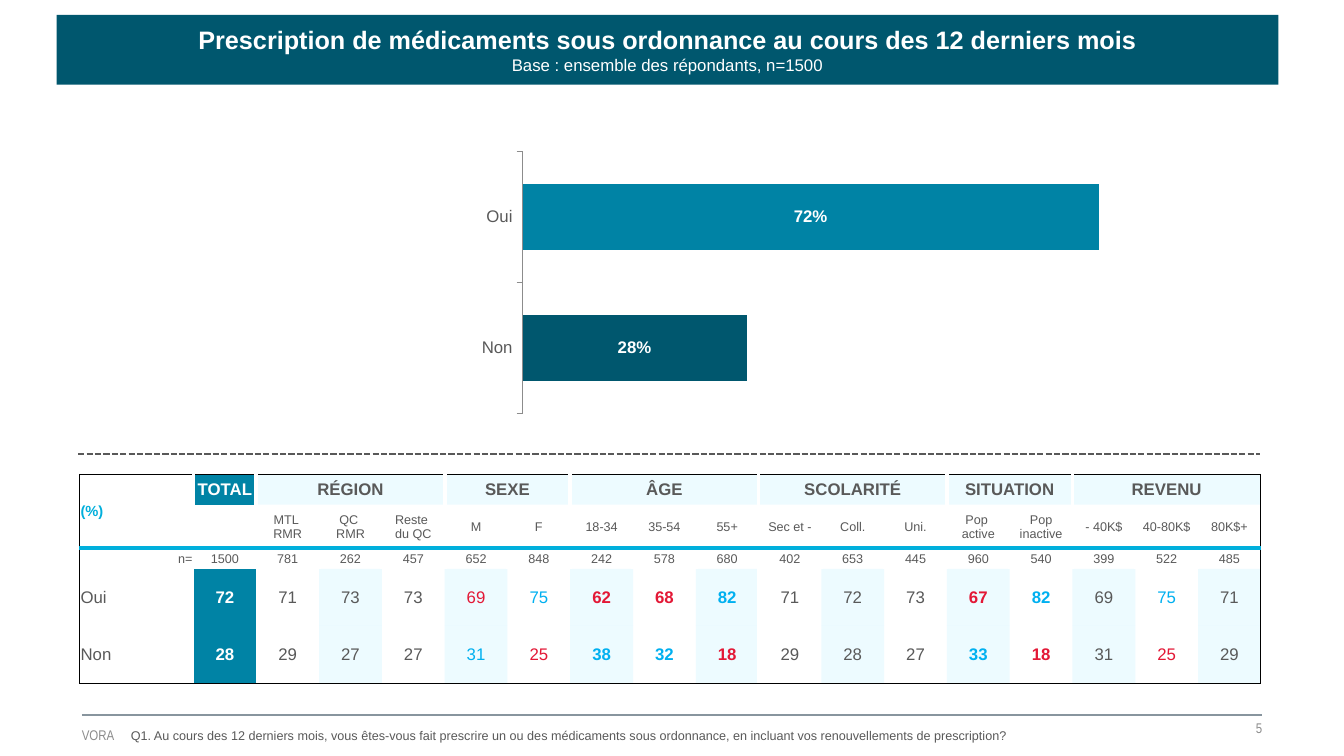
from lxml.etree import SubElement
from pptx import Presentation
from pptx.chart.data import CategoryChartData
from pptx.dml.color import RGBColor
from pptx.enum.chart import XL_CHART_TYPE, XL_LABEL_POSITION, XL_TICK_LABEL_POSITION, XL_TICK_MARK
from pptx.enum.dml import MSO_LINE
from pptx.enum.shapes import MSO_CONNECTOR, MSO_SHAPE
from pptx.enum.text import MSO_ANCHOR, PP_ALIGN
from pptx.oxml import parse_xml
from pptx.oxml.ns import nsdecls, qn
from pptx.util import Pt

COLORS = {
    "navy": "00576E", "teal": "0083A5", "cyan": "00AFDC", "band": "C5F3FF",
    "text": "595959", "muted": "8C8C8C", "rule": "88959E", "low": "E31836",
    "high": "00B0F0", "white": "FFFFFF", "black": "000000",
}
GROUPS = [("RÉGION", 3), ("SEXE", 2), ("ÂGE", 3), ("SCOLARITÉ", 3), ("SITUATION", 2), ("REVENU", 3)]
SEGMENTS = ["MTL \vRMR", "QC \vRMR", "Reste \vdu QC", "M", "F", "18-34", "35-54", "55+", "Sec et -",
            "Coll.", "Uni.", "Pop \vactive", "Pop inactive", "- 40K$", "40-80K$", "80K$+"]
COUNTS = "1500 781 262 457 652 848 242 578 680 402 653 445 960 540 399 522 485".split()
ANSWERS = {
    "Oui": "72 71 73 73 69r 75b 62R 68R 82B 71 72 73 67R 82B 69 75b 71".split(),
    "Non": "28 29 27 27 31b 25r 38B 32B 18R 29 28 27 33B 18R 31 25r 29".split(),
}
MARKS = {"r": "low", "b": "high"}
ROW_HEIGHTS = [21.4, 31, 15, 40.8, 40.8]
LAST_ROW, LAST_COLUMN = 4, 17
SCHOOLING_COLUMN = 10


def rgb(name):
    return RGBColor.from_string(COLORS[name])


def style_font(font, size, color, bold=False, name="Arial"):
    font.size, font.bold, font.name = Pt(size), bold, name
    font.color.rgb = rgb(color)


def add_text(slide, box, text, size, color, font="Arial", align=PP_ALIGN.LEFT, margins=None):
    frame = slide.shapes.add_textbox(*map(Pt, box)).text_frame
    frame.word_wrap = True
    if margins is not None:
        frame.margin_left = frame.margin_right = frame.margin_top = frame.margin_bottom = Pt(margins)
        frame.vertical_anchor = MSO_ANCHOR.MIDDLE
    frame.text = text
    paragraph = frame.paragraphs[0]
    paragraph.alignment = align
    style_font(paragraph.runs[0].font, size, color, name=font)


def add_rule(slide, left, right, top, color, dash=None):
    connector = slide.shapes.add_connector(MSO_CONNECTOR.STRAIGHT, Pt(left), Pt(top), Pt(right), Pt(top))
    connector.line.color.rgb = rgb(color)
    connector.line.width = Pt(1.5)
    if dash:
        connector.line.dash_style = dash
    SubElement(connector._element.spPr, qn("a:effectLst"))


def add_title(slide, heading, base):
    shape = slide.shapes.add_shape(MSO_SHAPE.RECTANGLE, Pt(40.5), Pt(10.6), Pt(872.6), Pt(49.8))
    shape.shadow.inherit = False
    shape.fill.solid()
    shape.fill.fore_color.rgb = rgb("navy")
    shape.line.fill.background()
    frame = shape.text_frame
    frame.word_wrap = True
    frame.vertical_anchor = MSO_ANCHOR.MIDDLE
    frame.margin_left = frame.margin_right = frame.margin_top = frame.margin_bottom = 0
    frame.text = f"{heading}\v{base}"
    paragraph = frame.paragraphs[0]
    paragraph.alignment = PP_ALIGN.CENTER
    style_font(paragraph.runs[0].font, 18, "white", True)
    style_font(paragraph.runs[1].font, 12, "white")


def add_answer_chart(slide):
    data = CategoryChartData(number_format="0%")
    data.categories = ["Oui", "Non"]
    data.add_series("Series 1", [0.72, 0.28])
    chart = slide.shapes.add_chart(XL_CHART_TYPE.BAR_CLUSTERED, Pt(83.5), Pt(103), Pt(830.2), Pt(193), data).chart
    chart.has_legend = False
    chart.has_title = False
    style_font(chart.font, 12, "text")

    category_axis, value_axis = chart.category_axis, chart.value_axis
    category_axis.reverse_order = True
    category_axis.major_tick_mark = XL_TICK_MARK.OUTSIDE
    category_axis.tick_label_position = XL_TICK_LABEL_POSITION.NEXT_TO_AXIS
    category_axis.format.line.color.rgb = rgb("muted")
    value_axis.minimum_scale, value_axis.maximum_scale = 0, 0.8
    value_axis.has_major_gridlines = False
    value_axis.visible = False

    plot = chart.plots[0]
    plot.gap_width = 100
    plot.vary_by_categories = False
    for point_index, color in enumerate(["teal", "navy"]):
        fill = plot.series[0].points[point_index].format.fill
        fill.solid()
        fill.fore_color.rgb = rgb(color)
    plot.has_data_labels = True
    labels = plot.data_labels
    labels.show_value = True
    labels.position = XL_LABEL_POSITION.CENTER
    labels.number_format, labels.number_format_is_linked = "0%", False
    style_font(labels.font, 12, "white", True)

    plot_area = chart._chartSpace.chart.plotArea
    for layout in plot_area.findall(qn("c:layout")):
        plot_area.remove(layout)
    settings = [("layoutTarget", "inner"), ("xMode", "edge"), ("yMode", "edge"),
                ("x", 0.349), ("y", 0.028), ("w", 0.551), ("h", 0.968)]
    entries = "".join(f'<c:{tag} val="{value}"/>' for tag, value in settings)
    plot_area.insert(0, parse_xml(f'<c:layout {nsdecls("c")}><c:manualLayout>{entries}</c:manualLayout></c:layout>'))


def set_borders(cell, borders):
    properties = cell._tc.get_or_add_tcPr()
    for side in "LRTB":
        color, width = borders.get(side, (None, 0))
        line = SubElement(properties, qn(f"a:ln{side}"), w=str(int(Pt(width))))
        if color:
            SubElement(SubElement(line, qn("a:solidFill")), qn("a:srgbClr"), val=COLORS[color])
        else:
            SubElement(line, qn("a:noFill"))


def cell_borders(row, column, last_row, last_column):
    borders = {}
    for side, edge, outer in [("L", column, 0), ("R", last_column + 1, LAST_COLUMN + 1)]:
        if edge == outer:
            borders[side] = ("black", 1)
        elif row <= 2:
            borders[side] = ("white", 2.25 if row and edge > SCHOOLING_COLUMN else 3)
        elif edge == SCHOOLING_COLUMN:
            borders[side] = ("white", 2.25)
    if row == 0:
        borders["T"] = ("black", 1)
    if row == 2:
        borders["T"] = ("cyan", 3)
    if last_row == 1:
        borders["B"] = ("cyan", 3)
    if last_row == LAST_ROW:
        borders["B"] = ("black", 1)
    return borders


def fill_cell(table, row, column, text="", size=9.0, color="text", bold=False,
              align=PP_ALIGN.CENTER, fill=None, rows=1, columns=1):
    cell = table.cell(row, column)
    if rows * columns > 1:
        cell.merge(table.cell(row + rows - 1, column + columns - 1))
    cell.margin_left = cell.margin_right = cell.margin_top = Pt(0.72)
    cell.margin_bottom = 0
    cell.vertical_anchor = MSO_ANCHOR.MIDDLE
    set_borders(cell, cell_borders(row, column, row + rows - 1, column + columns - 1))
    if fill:
        cell.fill.solid()
        cell.fill.fore_color.rgb = rgb(fill)
        if fill == "band":
            SubElement(cell._tc.tcPr.find(f".//{qn('a:solidFill')}/{qn('a:srgbClr')}[@val='{COLORS['band']}']"),
                       qn("a:alpha"), val="30000")
    else:
        cell.fill.background()
    cell.text = text
    paragraph = cell.text_frame.paragraphs[0]
    paragraph.alignment = align
    style_font(paragraph.font, size, color, bold)
    for run in paragraph.runs:
        style_font(run.font, size, color, bold)


def add_segment_table(slide):
    frame = slide.shapes.add_table(LAST_ROW + 1, LAST_COLUMN + 1, Pt(56.9), Pt(339), Pt(843.8), Pt(149))
    table = frame.table
    table.first_row = table.horz_banding = False
    table._tbl.tblPr.find(qn("a:tableStyleId")).text = "{2D5ABB26-0587-4C30-8999-92F81FD0307C}"
    for index, column in enumerate(table.columns):
        column.width = Pt(44.85 if index else 81.36)
    for row, height in zip(table.rows, ROW_HEIGHTS):
        row.height = Pt(height)

    fill_cell(table, 0, 0, "(%)", 10.5, "cyan", True, PP_ALIGN.LEFT, "white", rows=2)
    fill_cell(table, 0, 1, "TOTAL", 12, "white", True, fill="teal")
    start = 2
    for label, span in GROUPS:
        fill_cell(table, 0, start, label, 12, bold=True, fill="band", columns=span)
        start += span
    for column, segment in enumerate([""] + SEGMENTS, 1):
        fill_cell(table, 1, column, segment)
    fill_cell(table, 2, 0, "n=", align=PP_ALIGN.RIGHT)
    for column, count in enumerate(COUNTS, 1):
        fill_cell(table, 2, column, count)
    for row, (answer, values) in enumerate(ANSWERS.items(), 3):
        fill_cell(table, row, 0, answer, 12, align=PP_ALIGN.LEFT, fill="white")
        fill_cell(table, row, 1, values[0], 12, "white", True, fill="teal")
        for column, value in enumerate(values[1:], 2):
            mark = value[2:]
            fill_cell(table, row, column, value[:2], 12, MARKS.get(mark.lower(), "text"), mark.isupper(),
                      fill="band" if column % 2 else None)


def main():
    presentation = Presentation()
    presentation.slide_width, presentation.slide_height = Pt(960), Pt(540)
    slide = presentation.slides.add_slide(presentation.slide_layouts[6])
    add_rule(slide, 58.5, 901.5, 510.5, "rule")
    add_text(slide, (628.5, 510.5, 273, 18.7), "5", 10, "muted", "Arial Narrow", PP_ALIGN.RIGHT, 0)
    add_text(slide, (58.5, 515.5, 268.5, 18.7), "VORA", 10, "muted", "Arial Narrow", margins=0)
    add_text(slide, (86.4, 516.2, 813.6, 18), "Q1. Au cours des 12 derniers mois, vous êtes-vous fait prescrire un ou des "
             "médicaments sous ordonnance, en incluant vos renouvellements de prescription?", 9, "text")
    add_answer_chart(slide)
    add_rule(slide, 55.8, 900, 324, "text", MSO_LINE.SQUARE_DOT)
    add_segment_table(slide)
    add_title(slide, "Prescription de médicaments sous ordonnance au cours des 12 derniers mois",
              "Base : ensemble des répondants, n=1500")
    presentation.save("out.pptx")


if __name__ == "__main__":
    main()
